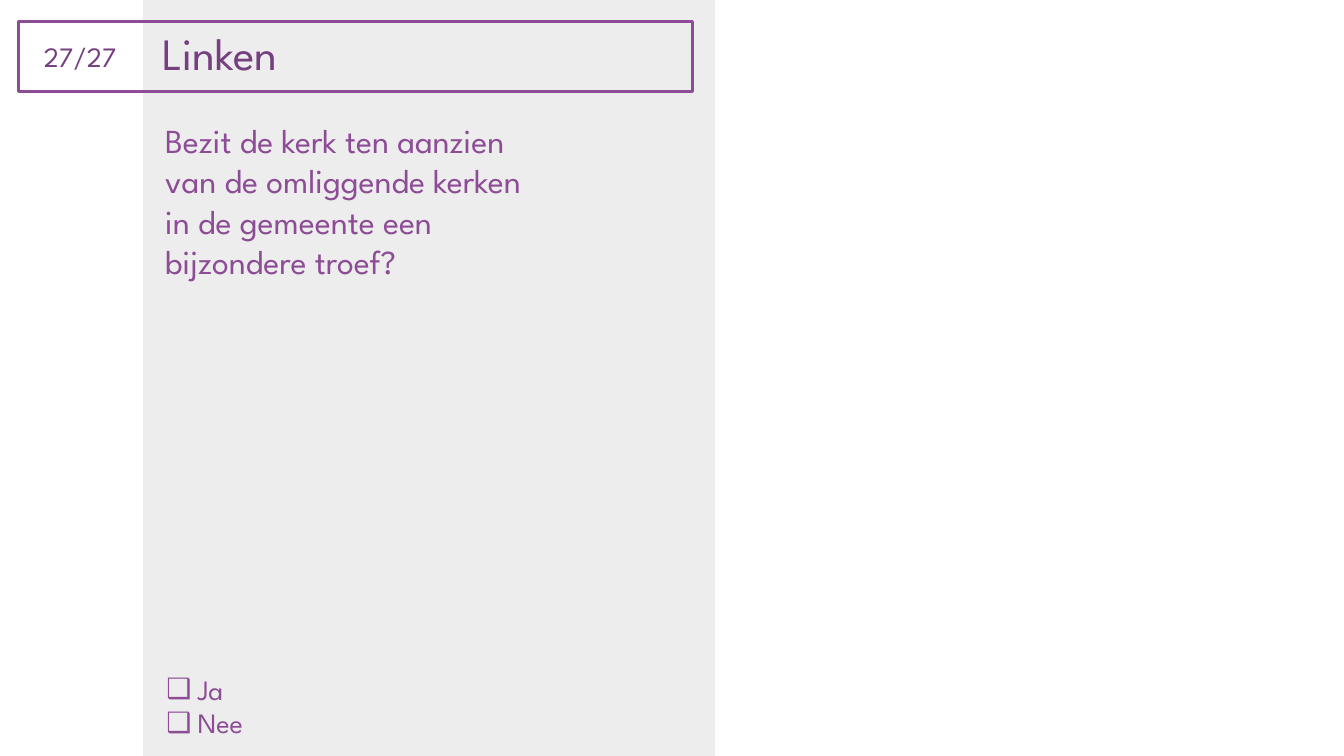
from dataclasses import dataclass

from lxml import etree
from pptx import Presentation
from pptx.dml.color import RGBColor
from pptx.enum.shapes import MSO_SHAPE
from pptx.enum.text import MSO_ANCHOR, MSO_AUTO_SIZE, PP_ALIGN
from pptx.oxml.ns import qn
from pptx.util import Inches, Pt

RECTANGLE = MSO_SHAPE.RECTANGLE
LEFT, CENTER = PP_ALIGN.LEFT, PP_ALIGN.CENTER
TOP, MIDDLE = MSO_ANCHOR.TOP, MSO_ANCHOR.MIDDLE
FIXED, GROW = MSO_AUTO_SIZE.NONE, MSO_AUTO_SIZE.SHAPE_TO_FIT_TEXT


@dataclass(frozen=True)
class Theme:
    font: str = "League Spartan"
    panel: RGBColor = RGBColor(0xEE, 0xED, 0xED)
    purple: RGBColor = RGBColor(0x8D, 0x4D, 0x96)
    dark_purple: RGBColor = RGBColor(0x76, 0x40, 0x80)
    title_size: Pt = Pt(32)
    question_size: Pt = Pt(24)
    small_size: Pt = Pt(20)
    frame_width: Pt = Pt(2.25)


THEME = Theme()


def set_attributes(target, values):
    for name, value in values.items():
        setattr(target, name, value)


def place(shape, box):
    names = ("left", "top", "width", "height")
    set_attributes(shape, dict(zip(names, map(Inches, box))))


def add_rectangle(slide, box, fill=None, line=None):
    shape = slide.shapes.add_shape(RECTANGLE, *map(Inches, box))
    shape.shadow.inherit = False
    if fill is None:
        shape.fill.background()
    else:
        shape.fill.solid()
        shape.fill.fore_color.rgb = fill
    if line is None:
        shape.line.fill.background()
    else:
        shape.line.color.rgb = line
        shape.line.width = THEME.frame_width


def add_checkbox(paragraph):
    properties = paragraph._p.get_or_add_pPr()
    set_indent = {"marL": Inches(0.31), "indent": Inches(-0.31)}
    for name, value in set_indent.items():
        properties.set(name, str(value))
    etree.SubElement(properties, qn("a:buChar")).set("char", "❑")


def write_lines(shape, lines, size, color, alignment=LEFT, anchor=TOP,
                auto_size=GROW, checkboxes=False):
    frame = shape.text_frame
    set_attributes(frame, {"word_wrap": True, "vertical_anchor": anchor,
                           "auto_size": auto_size})
    frame.text = "\n".join(lines)
    for paragraph in frame.paragraphs:
        if checkboxes:
            add_checkbox(paragraph)
        set_attributes(paragraph, {"alignment": alignment,
                                   "space_before": Pt(0)})
        for run in paragraph.runs:
            set_attributes(run.font, {"name": THEME.font, "size": size})
            run.font.color.rgb = color


def add_text(slide, box, lines, size, color, **layout):
    shape = slide.shapes.add_textbox(*map(Inches, box))
    write_lines(shape, lines, size, color, **layout)


def fill_placeholder(slide, placeholder, box, lines, size, color, **layout):
    place(placeholder, box)
    write_lines(placeholder, lines, size, color, **layout)
    # Bring the text in front of the panel
    slide.shapes._spTree.append(placeholder._element)


def main():
    presentation = Presentation()
    presentation.slide_width = Inches(13.33)
    presentation.slide_height = Inches(7.5)
    slide = presentation.slides.add_slide(presentation.slide_layouts[1])

    # Grey panel and heading frame
    add_rectangle(slide, (1.42, 0, 5.67, 7.5), fill=THEME.panel)
    add_rectangle(slide, (0.18, 0.21, 6.69, 0.7), line=THEME.purple)

    # Heading and answer options
    fill_placeholder(slide, slide.shapes.title, (1.51, 0.2, 5.43, 0.65),
                     ["Linken"], THEME.title_size, THEME.dark_purple,
                     anchor=MIDDLE, auto_size=FIXED)
    fill_placeholder(slide, slide.placeholders[1], (1.55, 6.62, 2.5, 0.77),
                     ["Ja", "Nee"], THEME.small_size, THEME.purple,
                     checkboxes=True)

    # Question number and question
    add_text(slide, (0.22, 0.34, 1.15, 0.44), ["27/27"],
             THEME.small_size, THEME.dark_purple, alignment=CENTER)
    add_text(slide, (1.54, 1.14, 5.43, 1.72),
             ["Bezit de kerk ten aanzien", "van de omliggende kerken",
              "in de gemeente een", "bijzondere troef?"],
             THEME.question_size, THEME.purple)

    presentation.save("out.pptx")


if __name__ == "__main__":
    main()
